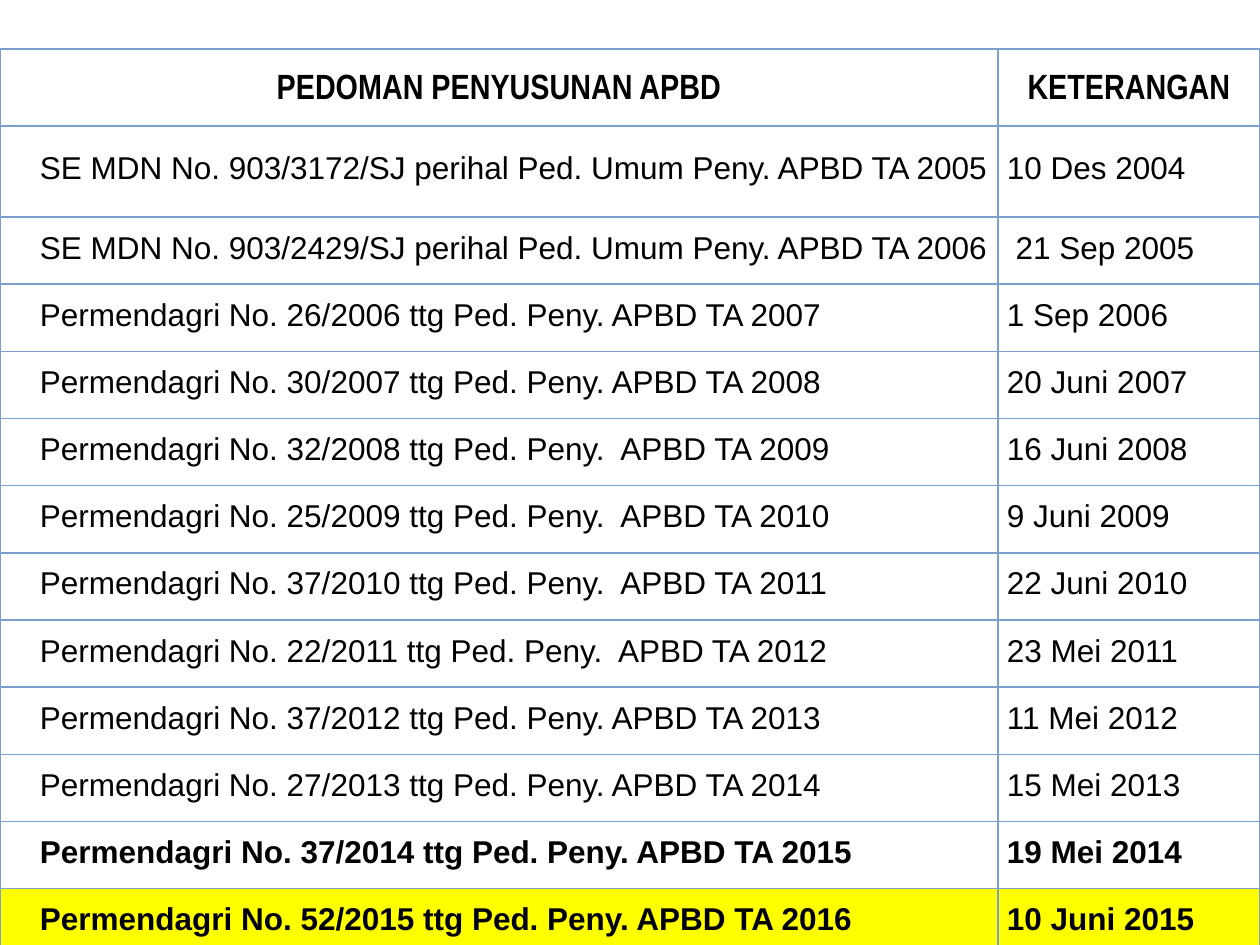
from lxml import etree
from pptx import Presentation
from pptx.dml.color import RGBColor
from pptx.enum.text import MSO_ANCHOR, PP_ALIGN
from pptx.oxml.ns import qn
from pptx.util import Pt

PX = 914400 / 126
MIDDLE = MSO_ANCHOR.MIDDLE
CENTER, LEFT = PP_ALIGN.CENTER, PP_ALIGN.LEFT
COLORS = {"text": "000000", "cell": "FFFFFF", "latest": "FFFF00", "border": "7BA0CD"}

HEADINGS = ("PEDOMAN PENYUSUNAN APBD", "KETERANGAN")
GUIDELINES = [
    ("SE MDN No. 903/3172/SJ perihal Ped. Umum Peny. APBD TA 2005", "10 Des 2004"),
    ("SE MDN No. 903/2429/SJ perihal Ped. Umum Peny. APBD TA 2006", " 21 Sep 2005"),
    ("Permendagri No. 26/2006 ttg Ped. Peny. APBD TA 2007", "1 Sep 2006"),
    ("Permendagri No. 30/2007 ttg Ped. Peny. APBD TA 2008", "20 Juni 2007"),
    ("Permendagri No. 32/2008 ttg Ped. Peny.  APBD TA 2009", "16 Juni 2008"),
    ("Permendagri No. 25/2009 ttg Ped. Peny.  APBD TA 2010", "9 Juni 2009"),
    ("Permendagri No. 37/2010 ttg Ped. Peny.  APBD TA 2011", "22 Juni 2010"),
    ("Permendagri No. 22/2011 ttg Ped. Peny.  APBD TA 2012", "23 Mei 2011"),
    ("Permendagri No. 37/2012 ttg Ped. Peny. APBD TA 2013", "11 Mei 2012"),
    ("Permendagri No. 27/2013 ttg Ped. Peny. APBD TA 2014", "15 Mei 2013"),
    ("Permendagri No. 37/2014 ttg Ped. Peny. APBD TA 2015", "19 Mei 2014"),
    ("Permendagri No. 52/2015 ttg Ped. Peny. APBD TA 2016", "10 Juni 2015"),
]


def px(length):
    return round(length * PX)


def set_borders(cell):
    properties = cell._tc.get_or_add_tcPr()
    for side in ("a:lnL", "a:lnR", "a:lnT", "a:lnB"):
        line = etree.SubElement(properties, qn(side), w=str(Pt(1)))
        fill = etree.SubElement(line, qn("a:solidFill"))
        etree.SubElement(fill, qn("a:srgbClr"), val=COLORS["border"])


def format_cell(cell, text, fill):
    cell.text_frame.text = text
    cell.vertical_anchor = MIDDLE
    cell.margin_left = cell.margin_right = px(9)
    cell.margin_top = cell.margin_bottom = 0
    set_borders(cell)
    if fill:
        cell.fill.solid()
        cell.fill.fore_color.rgb = RGBColor.from_string(COLORS[fill])
    else:
        cell.fill.background()


def format_text(cell, font, size, bold, align, line_spacing, space_before):
    para = cell.text_frame.paragraphs[0]
    para.alignment = align
    para.line_spacing = line_spacing
    para.space_before = Pt(space_before)
    para.space_after = Pt(6)
    span = para.runs[0]
    span.font.name = font
    span.font.size = Pt(size)
    span.font.bold = bold
    span.font.color.rgb = RGBColor.from_string(COLORS["text"])


def hang_indent(cell):
    properties = cell.text_frame.paragraphs[0]._p.get_or_add_pPr()
    properties.set("marL", str(px(74)))
    properties.set("indent", str(px(-43)))


def add_guideline_table(page, left, top, width, height):
    row_count = len(GUIDELINES) + 1
    frame = page.shapes.add_table(row_count, 2, px(left), px(top), px(width), px(height))
    table = frame.table
    table.first_row = table.horz_banding = False

    # Column widths and row heights: the rows after the first two are equal
    date_width, heading_height, first_height = 262, 77, 91
    table.columns[0].width = px(width - date_width)
    table.columns[1].width = px(date_width)
    equal_height = (height - heading_height - first_height) / (row_count - 2)
    heights = [heading_height, first_height] + [equal_height] * (row_count - 2)
    for row, row_height in zip(table.rows, heights):
        row.height = px(row_height)

    # Heading row
    for column, heading in enumerate(HEADINGS):
        cell = table.cell(0, column)
        format_cell(cell, heading, "cell")
        format_text(cell, "Arial Narrow", 20, True, CENTER, 1.15, 6)

    # Guideline rows: the last two are bold, the last one is highlighted
    last = row_count - 1
    fills = {last - 1: None, last: "latest"}
    for row, entry in enumerate(GUIDELINES, start=1):
        for column, text in enumerate(entry):
            cell = table.cell(row, column)
            format_cell(cell, text, fills.get(row, "cell"))
            format_text(cell, "Arial", 18, row in fills, LEFT, 0.8, 0)
        hang_indent(table.cell(row, 0))


def main():
    deck = Presentation()
    deck.slide_width, deck.slide_height = px(1260), px(945)
    page = deck.slides.add_slide(deck.slide_layouts[6])
    add_guideline_table(page, 0, 49, 1260, 907)
    deck.save("out.pptx")


if __name__ == "__main__":
    main()
